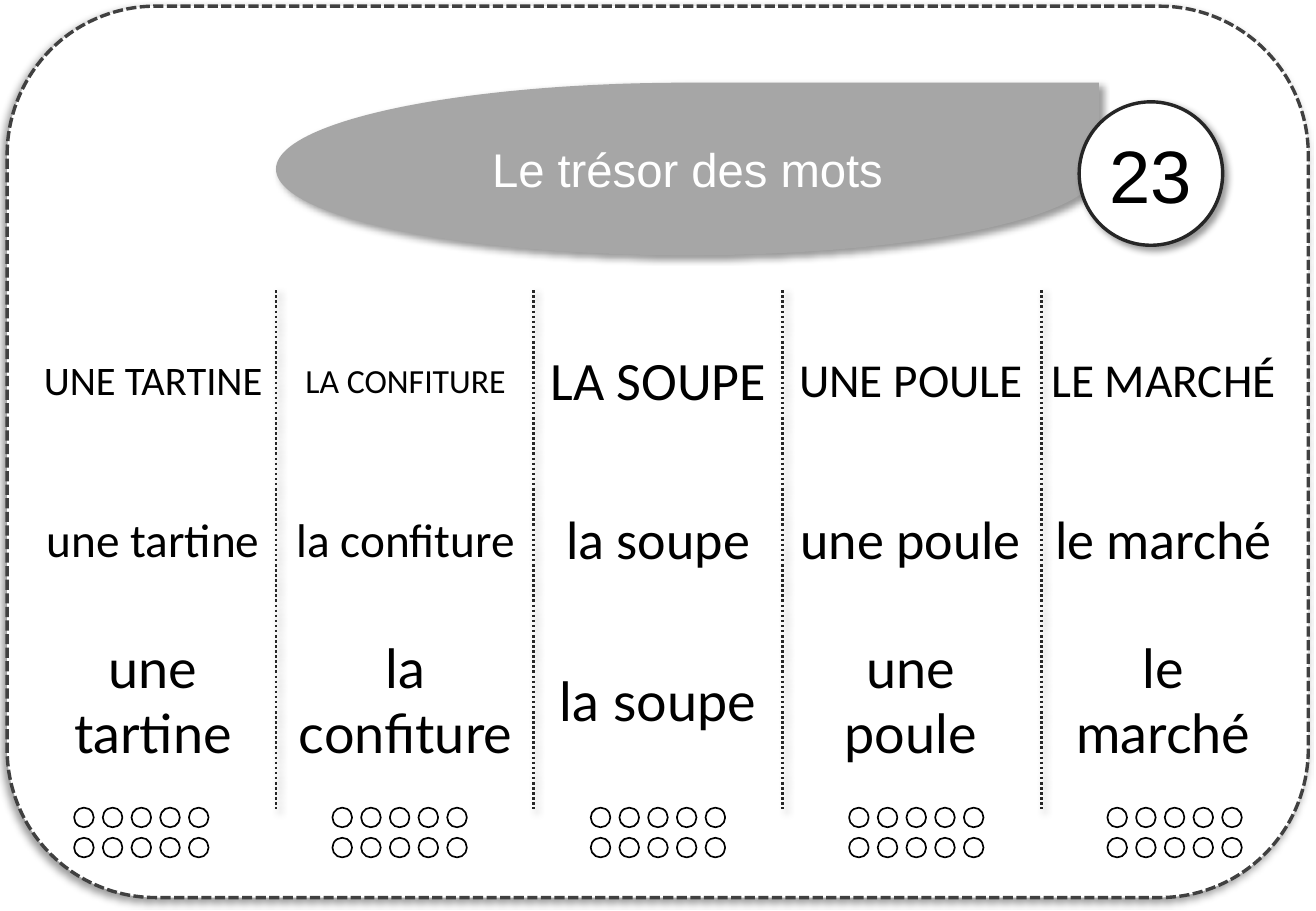
"""Build the word-treasure card: a dashed frame, a title drop and a table of words."""
from dataclasses import dataclass

from lxml import etree
from pptx import Presentation
from pptx.dml.color import RGBColor as Rgb
from pptx.enum import dml, shapes, text
from pptx.oxml import ns
from pptx.util import Cm, Pt


@dataclass(frozen=True)
class Theme:
    """Colours, fonts and type sizes of the card."""
    white: str = "FFFFFF"
    black: str = "000000"
    grey: str = "A6A6A6"
    edge: str = "404040"
    dark: str = "262626"
    head: str = "Arial"
    print: str = "Calibri"
    hand: str = "Lato"
    title: int = 28
    badge: int = 44


THEME = Theme()
PLAIN = "{2D5ABB26-0587-4C30-8999-92F81FD0307C}"
WORDS = ["une tartine", "la confiture", "la soupe", "une poule", "le marché"]
ROWS = [
    ([w.upper() for w in WORDS], THEME.print, [24, 20, 32, 28, 28]),
    (WORDS, THEME.print, [28, 28, 32, 32, 32]),
    (WORDS, THEME.hand, [32] * 5),
]


def write(frame, words, font, size, hue):
    """Put one centred paragraph in a text frame."""
    frame.text = words
    para = frame.paragraphs[0]
    para.alignment = text.PP_ALIGN.CENTER
    style = para.runs[0].font
    style.name, style.size, style.bold = font, Pt(size), False
    style.color.rgb = Rgb.from_string(hue)


def shade(item, angle=None):
    """Replace the default shadow by a soft one, or by none without an angle."""
    props = item._element.spPr
    list_ = etree.SubElement(props, ns.qn("a:effectLst"))
    if angle is None:
        return
    cast = etree.SubElement(list_, ns.qn("a:outerShdw"), blurRad=str(Pt(4)),
                            dist=str(Pt(3)), dir=str(angle * 60000), rotWithShape="0")
    hue = etree.SubElement(cast, ns.qn("a:srgbClr"), val=THEME.black)
    etree.SubElement(hue, ns.qn("a:alpha"), val="40000")


def stroke(item, hue, width, dash=None):
    """Format the line of a shape or connector."""
    item.line.color.rgb = Rgb.from_string(hue)
    item.line.width = Pt(width)
    if dash:
        item.line.dash_style = dash


def add_form(slide, kind, box, fill, line=None, angle=None):
    """Add a filled preset shape; line holds colour, width and dash."""
    form = slide.shapes.add_shape(kind, *map(Cm, box))
    form.fill.solid()
    form.fill.fore_color.rgb = Rgb.from_string(fill)
    if line:
        stroke(form, *line)
    else:
        form.line.fill.background()
    shade(form, angle)
    return form


def add_rule(slide, left):
    """Add a dotted divider between two columns."""
    rule = slide.shapes.add_connector(
        shapes.MSO_CONNECTOR.STRAIGHT, Cm(left), Cm(6.07), Cm(left), Cm(16.92))
    stroke(rule, THEME.dark, 1.5, dml.MSO_LINE.ROUND_DOT)
    shade(rule, 45)


def add_dots(slide, left, top):
    """Add two rows of five counting rings."""
    for row in range(2):
        for col in range(5):
            box = (left + col * 0.6, top + row * 0.63, 0.41, 0.41)
            add_form(slide, shapes.MSO_SHAPE.OVAL, box, THEME.white, (THEME.black, 1))


def add_title(slide, words, box):
    """Place the title placeholder over the drop."""
    title = slide.shapes.title
    title.left, title.top, title.width, title.height = map(Cm, box)
    write(title.text_frame, words, THEME.head, THEME.title, THEME.white)
    title.text_frame.vertical_anchor = text.MSO_ANCHOR.MIDDLE
    slide.shapes._spTree.append(title._element)


def add_badge(slide, words):
    """Add the round number badge."""
    badge = add_form(slide, shapes.MSO_SHAPE.OVAL, (22.56, 2.13, 3, 3),
                     THEME.white, (THEME.dark, 2), 45)
    frame = badge.text_frame
    frame.margin_left = frame.margin_right = 0
    frame.margin_top = frame.margin_bottom = 0
    frame.vertical_anchor = text.MSO_ANCHOR.MIDDLE
    write(frame, words, THEME.head, THEME.badge, THEME.black)


def add_words(slide):
    """Add the table of words in three scripts."""
    grid = slide.shapes.add_table(len(ROWS), len(WORDS), Cm(0.56), Cm(6.32),
                                  Cm(26.4), Cm(9.99)).table
    grid.first_row = grid.horz_banding = False
    grid._tbl.tblPr.find(ns.qn("a:tableStyleId")).text = PLAIN
    for r, (words, font, sizes) in enumerate(ROWS):
        for c, (word, size) in enumerate(zip(words, sizes)):
            cell = grid.cell(r, c)
            cell.fill.background()
            cell.vertical_anchor = text.MSO_ANCHOR.MIDDLE
            write(cell.text_frame, word, font, size, THEME.black)


def main():
    """Build and save the card."""
    deck = Presentation()
    deck.slide_width, deck.slide_height = Cm(27.51), Cm(19.05)
    slide = deck.slides.add_slide(deck.slide_layouts[5])
    add_form(slide, shapes.MSO_SHAPE.ROUNDED_RECTANGLE, (0.15, 0.13, 27.2, 18.64),
             THEME.white, (THEME.edge, 2, dml.MSO_LINE.SQUARE_DOT), 135)
    for left in (5.77, 11.15, 16.36, 21.77):
        add_rule(slide, left)
    for col in range(len(WORDS)):
        add_dots(slide, 1.55 + col * 5.4, 16.89)
    drop = (5.77, 1.73, 17.2, 3.61)
    add_form(slide, shapes.MSO_SHAPE.TEAR, drop, THEME.grey, angle=45)
    add_title(slide, "Le trésor des mots", drop)
    add_badge(slide, "23")
    add_words(slide)
    deck.save("out.pptx")


if __name__ == "__main__":
    main()
